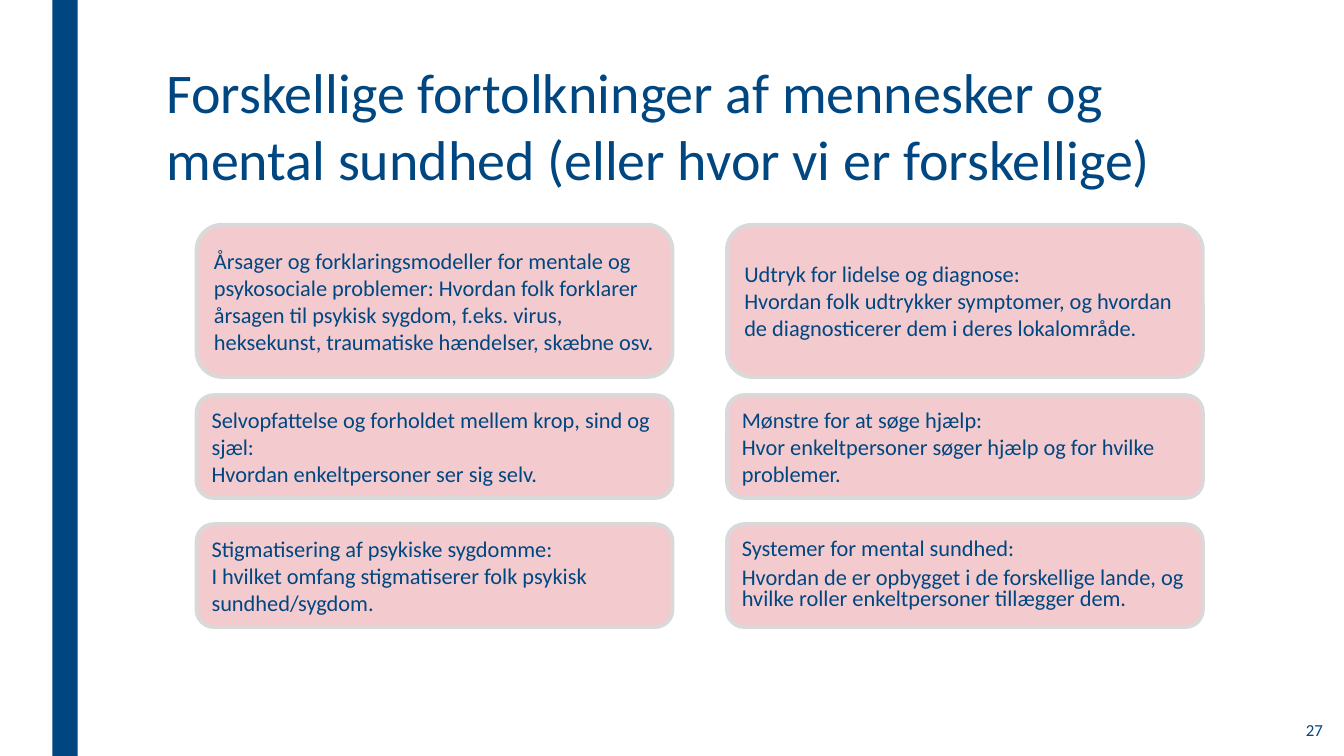
"""Build a slide on differing views of people and mental health."""
from pptx import Presentation
from pptx.dml.color import RGBColor
from pptx.enum.shapes import MSO_SHAPE
from pptx.enum.text import MSO_ANCHOR, MSO_AUTO_SIZE, PP_ALIGN
from pptx.util import Inches, Pt

TITLE = "Forskellige fortolkninger af mennesker og mental sundhed (eller hvor vi er forskellige)"
PAGE_NUMBER = "27"
TOPICS = [
    [
        ["Årsager og forklaringsmodeller for mentale og psykosociale problemer: "
         "Hvordan folk forklarer årsagen til psykisk sygdom, f.eks. virus, "
         "heksekunst, traumatiske hændelser, skæbne osv."],
        ["Udtryk for lidelse og diagnose:",
         "Hvordan folk udtrykker symptomer, og hvordan de diagnosticerer dem i deres lokalområde."],
    ],
    [
        ["Selvopfattelse og forholdet mellem krop, sind og sjæl:",
         "Hvordan enkeltpersoner ser sig selv."],
        ["Mønstre for at søge hjælp:",
         "Hvor enkeltpersoner søger hjælp og for hvilke problemer."],
    ],
    [
        ["Stigmatisering af psykiske sygdomme:",
         "I hvilket omfang stigmatiserer folk psykisk sundhed/sygdom."],
        ["Systemer for mental sundhed:",
         "Hvordan de er opbygget i de forskellige lande, og hvilke roller "
         "enkeltpersoner tillægger dem."],
    ],
]
TIGHT_CELL = (2, 1)
COLORS = {"navy": "004680", "pink": "F3CBCF", "grey": "D9D9D9"}
FONT = "Calibri"
WIDTH, HEIGHT = 13.33, 7.5
COLUMN_LEFTS = [1.95, 7.21]
CARD_WIDTH = 4.72
ROWS = [(2.23, 1.51), (3.92, 1.02), (5.2, 1.02)]


def color(name):
    return RGBColor.from_string(COLORS[name])


def write(shape, lines, size, align=PP_ALIGN.LEFT, anchor=MSO_ANCHOR.MIDDLE,
          line_spacing=None, gap=0):
    frame = shape.text_frame
    frame.word_wrap = True
    frame.auto_size = MSO_AUTO_SIZE.NONE
    frame.vertical_anchor = anchor
    for index, line in enumerate(lines):
        para = frame.add_paragraph() if index else frame.paragraphs[0]
        para.alignment = align
        para.space_before = Pt(gap if index else 0)
        if line_spacing:
            para.line_spacing = Pt(line_spacing)
        span = para.add_run()
        span.text = line
        span.font.name = FONT
        span.font.size = Pt(size)
        span.font.color.rgb = color("navy")


def add_panel(page, kind, bounds, fill, line=None):
    panel = page.shapes.add_shape(kind, *map(Inches, bounds))
    panel.shadow.inherit = False
    panel.fill.solid()
    panel.fill.fore_color.rgb = color(fill)
    if line:
        panel.line.color.rgb = color(line)
        panel.line.width = Pt(2.75)
    else:
        panel.line.fill.background()
    return panel


def main():
    deck = Presentation()
    deck.slide_width, deck.slide_height = Inches(WIDTH), Inches(HEIGHT)
    page = deck.slides.add_slide(deck.slide_layouts[5])

    add_panel(page, MSO_SHAPE.RECTANGLE, (0.52, 0, 0.25, HEIGHT), "navy")

    title = page.shapes.title
    title.left, title.top, title.width, title.height = map(Inches, (1.55, 0.52, 10.87, 1.62))
    write(title, [TITLE], 40, anchor=MSO_ANCHOR.TOP)

    for row, (top, height) in enumerate(ROWS):
        for column, left in enumerate(COLUMN_LEFTS):
            card = add_panel(page, MSO_SHAPE.ROUNDED_RECTANGLE,
                             (left, top, CARD_WIDTH, height), "pink", "grey")
            spacing = {"line_spacing": 15, "gap": 6} if (row, column) == TIGHT_CELL else {}
            write(card, TOPICS[row][column], 16, **spacing)

    number = page.shapes.add_textbox(*map(Inches, (11.47, 7.02, 1.75, 0.44)))
    write(number, [PAGE_NUMBER], 12, align=PP_ALIGN.RIGHT)

    deck.save("out.pptx")


if __name__ == "__main__":
    main()
